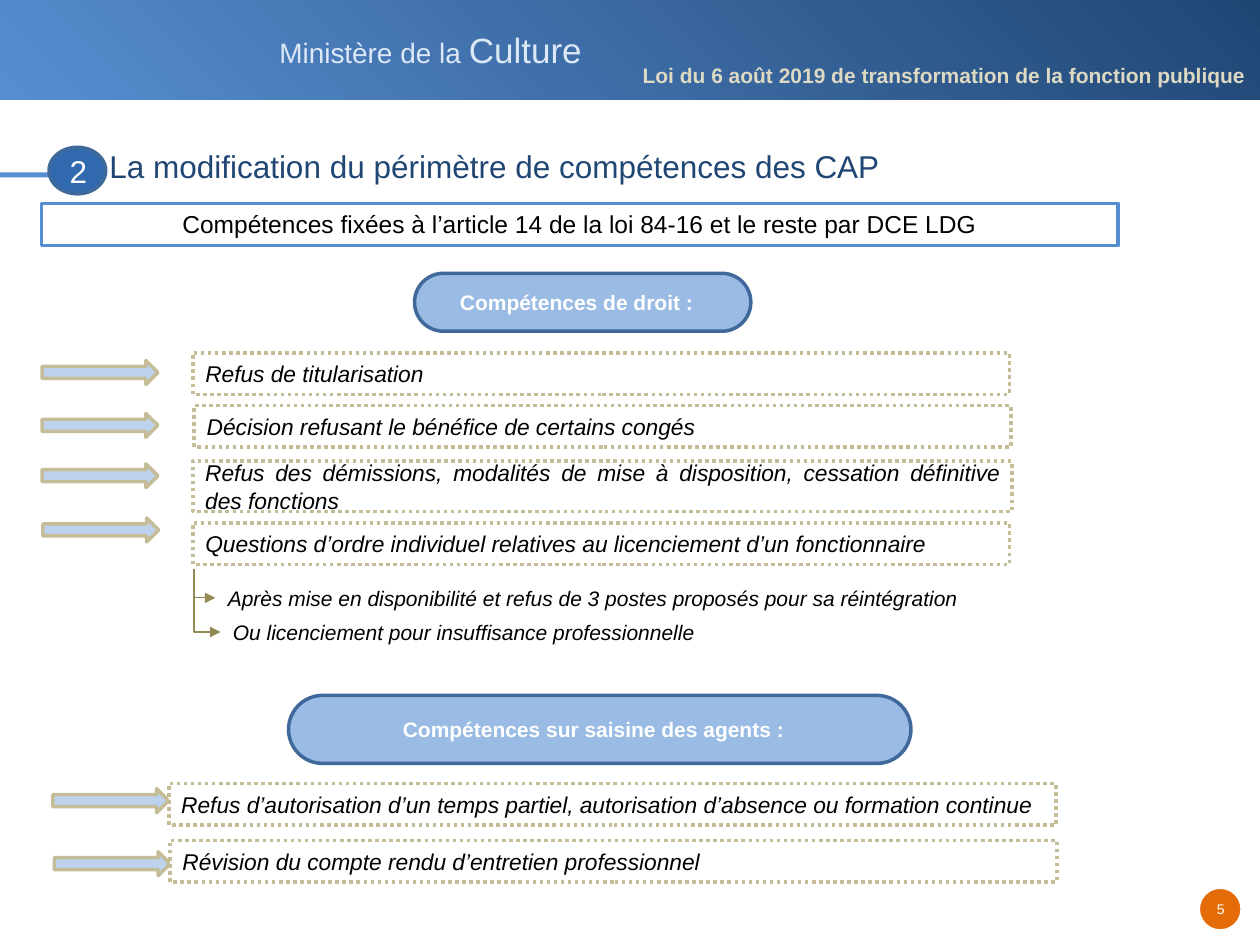
from pptx import Presentation
from pptx.dml.color import RGBColor
from pptx.enum.dml import MSO_LINE
from pptx.enum.shapes import MSO_CONNECTOR, MSO_SHAPE
from pptx.enum.text import MSO_ANCHOR, PP_ALIGN
from pptx.oxml.ns import qn
from pptx.util import Pt
from lxml.etree import SubElement

# Content: arrow left, arrow top, box left, top, width, height, text
ROWS = [
    (24, 206, 110.2, 201.6, 466.6, 23.8, "Refus de titularisation"),
    (24, 236.2, 111, 231.8, 466.6, 23.8,
     "Décision refusant le bénéfice de certains congés"),
    (24, 265, 110.2, 263.5, 468, 28.8,
     "Refus des démissions, modalités de mise à disposition, "
     "cessation définitive des fonctions"),
    (24.5, 296, 110.2, 298.8, 466.6, 23.8,
     "Questions d’ordre individuel relatives au licenciement d’un fonctionnaire"),
    (30.2, 450.7, 96.5, 447.8, 506.9, 23.8,
     "Refus d’autorisation d’un temps partiel, autorisation d’absence "
     "ou formation continue"),
    (31, 486.7, 97.2, 480.2, 506.9, 23.8,
     "Révision du compte rendu d’entretien professionnel"),
]
# Left, top, width, text
CASES = [
    (123.1, 330.5, 509, "Après mise en disponibilité et refus de 3 postes "
     "proposés pour sa réintégration"),
    (126, 350, 391, "Ou licenciement pour insuffisance professionnelle"),
]
# Left, top, width, height, text
PILLS = [
    (236.9, 156.2, 192.2, 33.1, "Compétences de droit :"),
    (164.9, 397.4, 355.7, 38.9, "Compétences sur saisine des agents :"),
]
STEM = (110.9, 325.4)
CASE_H = 22.3

# Formats
BLUE, NAVY, EDGE, SAND = "578ED1", "204674", "40699B", "C4BD97"
MID, TOP = MSO_ANCHOR.MIDDLE, MSO_ANCHOR.TOP
WHITE_BOLD = {"size": Pt(12), "bold": True}
ITEM = {"size": Pt(13), "italic": True}
CASE = {"size": Pt(12), "italic": True}

prs = Presentation()
prs.slide_width, prs.slide_height = Pt(720), Pt(540)
slide = prs.slides.add_slide(prs.slide_layouts[6])
shapes = slide.shapes


def rgb(code):
    return RGBColor.from_string(code)


def put(kind, area, fill, line=None, width=2, dash=None):
    shape = shapes.add_shape(kind, *map(Pt, area))
    shape.shadow.inherit = False
    if fill:
        shape.fill.solid()
        shape.fill.fore_color.rgb = rgb(fill)
    if line:
        shape.line.color.rgb = rgb(line)
        shape.line.width = Pt(width)
        shape.line.dash_style = dash
    else:
        shape.line.fill.background()
    return shape


def write(shape, runs, color, align=PP_ALIGN.LEFT, anchor=TOP, wrap=True,
          inset=(7.2, 3.6, 7.2, 3.6)):
    frame = shape.text_frame
    sides = ("margin_left", "margin_top", "margin_right", "margin_bottom")
    look = dict(zip(sides, map(Pt, inset)))
    look.update(word_wrap=wrap, vertical_anchor=anchor)
    for key, value in look.items():
        setattr(frame, key, value)
    para = frame.paragraphs[0]
    para.alignment = align
    for text, style in runs:
        run = para.add_run()
        run.text = text
        run.font.name = "Arial"
        run.font.color.rgb = rgb(color)
        for key, value in style.items():
            setattr(run.font, key, value)
    return para


def label(area, runs, color, **opts):
    return write(shapes.add_textbox(*map(Pt, area)), runs, color, **opts)


def elbow(start, end):
    """Go down from start, then right to end: a quarter-turned bent line."""
    (x, y), (right, low) = start, end
    wide, high = right - x, low - y
    midx, midy = (x + right) / 2, (y + low) / 2
    link = shapes.add_connector(
        MSO_CONNECTOR.ELBOW, Pt(midx + high / 2), Pt(midy - wide / 2),
        Pt(midx - high / 2), Pt(midy + wide / 2))
    link.line.color.rgb = rgb("948A54")
    link.line.width = Pt(0.75)
    props = link._element.spPr
    props.find(qn("a:xfrm")).set("rot", "16200000")
    props.find(qn("a:prstGeom")).set("prst", "bentConnector2")
    SubElement(props.find(qn("a:ln")), qn("a:tailEnd"), type="triangle")
    SubElement(props, qn("a:effectLst"))


# Header band
band = put(MSO_SHAPE.RECTANGLE, (0, 0, 720, 57), None)
band.fill.gradient()
band.fill.gradient_angle = 225
for stop, code in zip(band.fill.gradient_stops, (NAVY, BLUE)):
    stop.color.rgb = rgb(code)
label((152.6, 13, 189.4, 31.7),
      [("Ministère de la ", {"size": Pt(16)}), ("Culture", {"size": Pt(20)})],
      "DDE8F6", wrap=False)
law = label((367.2, 38.2, 349.2, 12.2),
            [("Loi du 6 août 2019 de transformation de la fonction publique",
              WHITE_BOLD)], "DDD9C3", inset=(0, 0, 0, 0))
law.line_spacing, law.space_after = 0.85, Pt(6)

# Section title
put(MSO_SHAPE.RECTANGLE, (0, 98.6, 49, 2.9), BLUE)
label((55.4, 80.6, 465, 28.8),
      [("La modification du périmètre de compétences des CAP",
        {"size": Pt(18)})], NAVY)
badge = put(MSO_SHAPE.OVAL, (28, 84.2, 32.4, 26.6), "3069AE", EDGE)
write(badge, [("2", {"size": Pt(18)})], "FFFFFF", PP_ALIGN.CENTER, MID)
frame = put(MSO_SHAPE.RECTANGLE, (23.8, 116.2, 615, 24.2), "FFFFFF", BLUE)
write(frame, [("Compétences fixées à l’article 14 de la loi 84-16 "
               "et le reste par DCE LDG", {"size": Pt(14)})],
      "000000", PP_ALIGN.CENTER)

# Group headings
for *area, text in PILLS:
    pill = put(MSO_SHAPE.ROUNDED_RECTANGLE, area, "9ABBE3", EDGE)
    pill.adjustments[0] = 0.5
    write(pill, [(text, WHITE_BOLD)], "FFFFFF", PP_ALIGN.CENTER, MID,
          inset=(7.2, 3.6, 14, 3.6))

# Arrows and dotted boxes
for left, top, *area, text in ROWS:
    put(MSO_SHAPE.RIGHT_ARROW, (left, top, 66.2, 13.7), "BCD2ED", SAND)
    box = put(MSO_SHAPE.RECTANGLE, area, "FFFFFF", SAND,
              dash=MSO_LINE.ROUND_DOT)
    write(box, [(text, ITEM)], "000000", PP_ALIGN.JUSTIFY, MID)

# Dismissal cases, then their branches on top
for left, top, width, text in CASES:
    box = put(MSO_SHAPE.RECTANGLE, (left, top, width, CASE_H), "FFFFFF")
    write(box, [(text, CASE)], "000000", PP_ALIGN.JUSTIFY, MID)
for left, top, *rest in CASES:
    elbow(STEM, (left, top + CASE_H / 2))

# Page number
put(MSO_SHAPE.OVAL, (685.4, 507.6, 23.8, 23.8), "E36C09", "FFFFFF", 0.75)
label((686.9, 511.2, 21.6, 16.6), [("5", {"size": Pt(8)})], "FFFFFF",
      align=PP_ALIGN.CENTER, wrap=False, inset=(3.6,) * 4)

prs.save("out.pptx")
